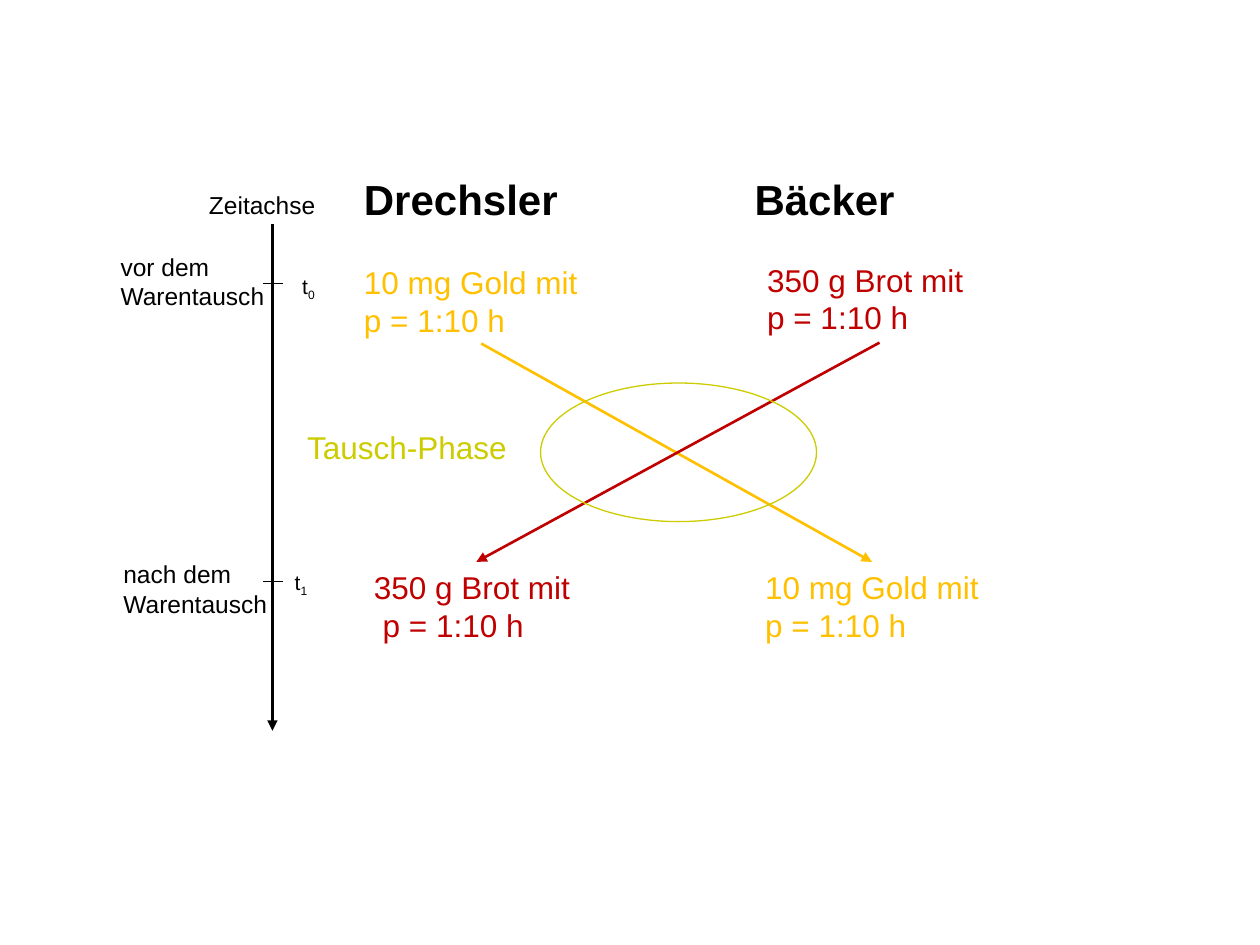
from lxml.etree import SubElement
from pptx import Presentation
from pptx.dml.color import RGBColor
from pptx.enum.shapes import MSO_CONNECTOR as Connector, MSO_SHAPE as Shape
from pptx.oxml.ns import qn
from pptx.util import Pt

BLACK, GOLD, RED, OLIVE = "000000", "FFC000", "C00000", "CCCC00"


def add_label(text, left, top, width, height, size, color, bold=False, wrap=False):
    box = slide.shapes.add_textbox(Pt(left), Pt(top), Pt(width), Pt(height))
    box.text_frame.word_wrap = wrap
    box.text_frame.text = text
    for para in box.text_frame.paragraphs:
        for span in para.runs:
            span.font.name = "Arial"
            span.font.size = Pt(size)
            span.font.bold = bold
            span.font.color.rgb = RGBColor.from_string(color)
    return box


def add_line(x1, y1, x2, y2, color, width, arrow=False):
    line = slide.shapes.add_connector(Connector.STRAIGHT, Pt(x1), Pt(y1), Pt(x2), Pt(y2))
    line.line.color.rgb = RGBColor.from_string(color)
    line.line.width = Pt(width)
    if arrow:
        SubElement(line.line._get_or_add_ln(), qn("a:tailEnd"), type="triangle")
    SubElement(line._element.spPr, qn("a:effectLst"))


deck = Presentation()
deck.slide_width, deck.slide_height = Pt(720), Pt(540)
slide = deck.slides.add_slide(deck.slide_layouts[6])

# Goods before and after the exchange
add_label("10 mg Gold mit\np = 1:10 h", 200.9, 146.9, 170, 50.4, 18, GOLD, wrap=True)
add_label("350 g Brot mit\v p = 1:10 h", 206.6, 321.1, 130.3, 50.4, 18, RED, wrap=True)
add_label("350 g Brot mit\vp = 1:10 h", 431.3, 145.4, 142.6, 50.4, 18, RED, wrap=True)
add_label("10 mg Gold mit\vp = 1:10 h", 430.2, 321.1, 136.8, 50.4, 18, GOLD)

# Trading partners
add_label("Drechsler", 200.9, 95.8, 126.7, 36, 24, BLACK, bold=True)
add_label("Bäcker", 424.1, 95.8, 95.8, 36, 24, BLACK, bold=True)

# Time axis
add_label("Zeitachse", 112.3, 105.1, 75.6, 24.5, 14, BLACK)
add_line(155.7, 128.2, 155.7, 417.6, BLACK, 1.5, arrow=True)

# Points in time: caption, tick and t with its index
for index, (caption, left, top, tick_y, time_left, time_top) in enumerate([
    ("vor dem\vWarentausch", 61.8, 140.4, 162.2, 165.6, 152.6),
    ("nach dem\vWarentausch", 63.4, 316.1, 332.4, 161.3, 321.8),
]):
    add_label(caption, left, top, 97.2, 41, 14, BLACK)
    add_line(150.2, tick_y, 161.6, tick_y, BLACK, 0.75)
    time = add_label("t", time_left, time_top, 22.3, 21.6, 12, BLACK)
    span = time.text_frame.paragraphs[0].add_run()
    span.text = str(index)
    span.font.name = "Arial"
    span.font.size = Pt(12)
    span.font.color.rgb = RGBColor.from_string(BLACK)
    span.font._element.set("baseline", "-25000")

# Crossing exchange arrows
add_line(275, 196.3, 498.3, 321.1, GOLD, 1.5, arrow=True)
add_line(502.6, 195.8, 272.2, 321.1, RED, 1.5, arrow=True)

# Exchange phase
phase = slide.shapes.add_shape(Shape.OVAL, Pt(308.9), Pt(218.9), Pt(157.7), Pt(79.2))
phase.shadow.inherit = False
phase.fill.background()
phase.line.color.rgb = RGBColor.from_string(OLIVE)
phase.line.width = Pt(0.75)
add_label("Tausch-Phase", 168.5, 241.2, 129.6, 28.8, 18, OLIVE)

deck.save("out.pptx")
